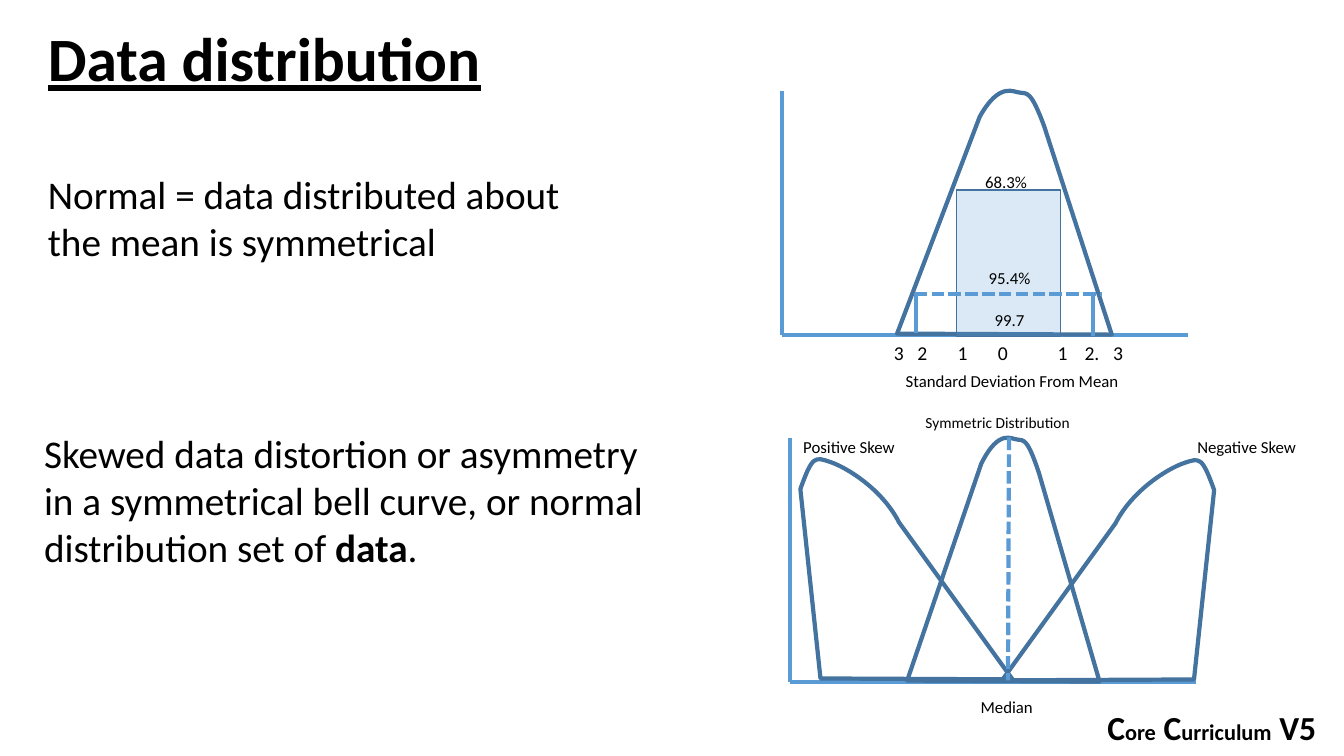
from dataclasses import dataclass
from typing import NamedTuple, Optional

from lxml.etree import SubElement
from pptx import Presentation
from pptx.dml.color import RGBColor
from pptx.enum.dml import MSO_LINE_DASH_STYLE as Dash
from pptx.enum.shapes import MSO_CONNECTOR_TYPE as Connector
from pptx.enum.shapes import MSO_SHAPE as Shape
from pptx.enum.text import MSO_ANCHOR as Anchor
from pptx.enum.text import MSO_AUTO_SIZE as AutoSize
from pptx.enum.text import PP_ALIGN as Align
from pptx.oxml.ns import qn
from pptx.util import Inches, Pt

COLUMNS, ROWS = 160, 90
CELL = Inches(7.5) / ROWS
FONT, BLACK, BLUE, DARK_BLUE = "Calibri", "000000", "5B9BD5", "43739E"
AXIS_WIDTH, AXIS_HEIGHT = 48.3, 29.04


class Frame(NamedTuple):
    """A rectangle in grid columns and rows."""
    left: float
    top: float
    width: float
    height: float


class Span(NamedTuple):
    """A stretch of text with its own size or weight."""
    text: str
    size: Optional[float] = None
    bold: Optional[bool] = None


@dataclass
class Label:
    """A short one-line caption."""
    text: str
    left: float
    top: float
    width: float
    size: float = 12


@dataclass
class Stroke:
    """A straight line between two grid points."""
    x1: float
    y1: float
    x2: float
    y2: float
    dashed: bool = False


@dataclass
class Curve:
    """A closed outline fitted to a frame, optionally mirrored."""
    outline: list
    frame: Frame
    mirrored: bool = False


BELL = [[(0, 99.6)], [(38.5, 10.7)],
        [(47.9, -4.1), (54.5, 0.8), (57.3, 0.8)],
        [(60.6, 1.2), (62.4, 0), (68.5, 14.5)], [(100, 100)]]
SKEW = [[(100, 100)], [(46.5, 28.9)],
        [(38.5, 13.8), (21.9, 4.1), (14.3, 1.6)],
        [(6.7, -0.9), (5.7, -1.4), (0, 13.8)], [(9.5, 99.6)]]

ORIGINS = [(93.12, 39.84), (94.08, 81.18)]
CURVES = [
    Curve(BELL, Frame(106.8, 10.8, 25.56, AXIS_HEIGHT)),
    Curve(SKEW, Frame(95.28, 54.6, 25.26, 26.28)),
    Curve(BELL, Frame(108, 52.1, 22.9, AXIS_HEIGHT)),
    Curve(SKEW, Frame(119.28, 54.72, 25.26, 26.28), mirrored=True),
]
ONE_DEVIATION = Frame(113.88, 22.64, 12.36, 17.4)
MARKERS = [
    Stroke(108.9, 34.96, 131.16, 34.96, dashed=True),
    Stroke(109.02, 34.96, 109.02, 39.6),
    Stroke(130.16, 35.28, 130.16, 39.96),
    Stroke(120.12, 52.08, 120, 81, dashed=True),
]
LABELS = [
    Label("Standard Deviation From Mean", 106.64, 43.56, 41.28),
    Label("68.3%", 116.1, 19.8, 7.44),
    Label("95.4%", 116.52, 31.32, 7.44),
    Label("99.7", 117.24, 36.32, 6),
    Label("Symmetric Distribution", 109, 48.6, 19.68, 11),
    Label("Negative Skew", 141.36, 51.44, 14.28),
    Label("Positive Skew", 94.44, 51.36, 13.56),
    Label("Median", 115.56, 82.4, 8.64),
]
TICKS = [("3", 12.7), ("2", 15.5), ("1", 20.3), ("0", 25.1),
         ("1", 32.2), ("2.", 35.7), ("3", 38.8)]


def cells(count: float) -> int:
    """Turn grid cells into slide units."""
    return round(count * CELL)


def colour(hex_code: str) -> RGBColor:
    """Turn a hex string into a colour."""
    return RGBColor.from_string(hex_code)


def style(para, size: float, bold: bool = False) -> None:
    """Set the font of a whole paragraph."""
    para.font.name, para.font.size, para.font.bold = FONT, Pt(size), bold
    para.font.color.rgb = colour(BLACK)


def place(shape, frame: Frame) -> None:
    """Move a shape to its frame."""
    shape.left, shape.top, shape.width, shape.height = map(cells, frame)


def add_box(page, frame: Frame, wrap: bool = True):
    """Add a text box and return its first paragraph."""
    box = page.shapes.add_textbox(*map(cells, frame))
    box.text_frame.word_wrap = wrap
    return box.text_frame.paragraphs[0]


def add_spans(para, spans: list[Span]) -> None:
    """Add runs that differ in size or weight."""
    for span in spans:
        run = para.add_run()
        run.text = span.text
        if span.size:
            run.font.size = Pt(span.size)
        if span.bold is not None:
            run.font.bold = span.bold


def fill_title(page) -> None:
    """Write the underlined heading."""
    title = page.shapes.title
    place(title, Frame(4.5, -0.96, 158.4, 16.56))
    title.text_frame.auto_size = AutoSize.NONE
    title.text_frame.vertical_anchor = Anchor.MIDDLE
    para = title.text_frame.paragraphs[0]
    para.text, para.alignment, para.line_spacing = "Data distribution", Align.LEFT, 0.9
    style(para, 44, bold=True)
    para.font.underline = True


def fill_body(body, frame: Frame, lines: list[list[Span]]) -> None:
    """Write unbulleted statements into a body placeholder."""
    place(body, frame)
    text = body.text_frame
    text.auto_size = AutoSize.NONE
    for index, spans in enumerate(lines):
        para = text.add_paragraph() if index else text.paragraphs[0]
        properties = para._p.get_or_add_pPr()
        properties.set("marL", "0")
        properties.set("indent", "0")
        SubElement(properties, qn("a:buNone"))
        para.space_before = Pt(0)
        style(para, 28)
        add_spans(para, spans)


def add_stroke(page, stroke: Stroke) -> None:
    """Draw a straight line."""
    ends = map(cells, (stroke.x1, stroke.y1, stroke.x2, stroke.y2))
    line = page.shapes.add_connector(Connector.STRAIGHT, *ends)
    line.line.color.rgb, line.line.width = colour(BLUE), Pt(3)
    if stroke.dashed:
        line.line.dash_style = Dash.SQUARE_DOT
    SubElement(line._element.spPr, qn("a:effectLst"))


def add_curve(page, curve: Curve) -> None:
    """Draw a distribution outline with true cubic segments."""
    frame = curve.frame
    segments = [[(cells(frame.left + frame.width * (100 - x if curve.mirrored else x) / 100),
                  cells(frame.top + frame.height * y / 100)) for x, y in segment]
                for segment in curve.outline]
    anchors = [segment[-1] for segment in segments]
    builder = page.shapes.build_freeform(*anchors[0])
    builder.add_line_segments(anchors[1:], close=True)
    shape = builder.convert_to_shape()
    lines = shape._element.spPr.findall(".//" + qn("a:lnTo"))
    for segment, line in zip(segments[1:], lines):
        if len(segment) == 3:
            cubic = line.makeelement(qn("a:cubicBezTo"))
            for x, y in segment:
                SubElement(cubic, qn("a:pt"), x=str(x - shape.left), y=str(y - shape.top))
            line.getparent().replace(line, cubic)
    shape.shadow.inherit = False
    shape.fill.background()
    shape.line.color.rgb, shape.line.width = colour(DARK_BLUE), Pt(3)


def add_deviation_area(page) -> None:
    """Draw the translucent one-deviation area."""
    area = page.shapes.add_shape(Shape.RECTANGLE, *map(cells, ONE_DEVIATION))
    area.shadow.inherit = False
    area.fill.solid()
    area.fill.fore_color.rgb = colour(BLUE)
    SubElement(area._element.spPr.find(".//" + qn("a:srgbClr")), qn("a:alpha"), val="22000")
    area.line.color.rgb, area.line.width = colour(DARK_BLUE), Pt(1)


def add_ticks(page) -> None:
    """Write the deviation scale on centred tab stops."""
    para = add_box(page, Frame(93.12, 39.96, 48.36, 4.08))
    stops = SubElement(para._p.get_or_add_pPr(), qn("a:tabLst"))
    for _, position in TICKS:
        SubElement(stops, qn("a:tab"), pos=str(cells(position)), algn="ctr")
    style(para, 14)
    add_spans(para, [Span("".join("\t" + text for text, _ in TICKS))])


def main() -> None:
    """Build the slide."""
    deck = Presentation()
    deck.slide_width, deck.slide_height = cells(COLUMNS), cells(ROWS)
    page = deck.slides.add_slide(deck.slide_layouts[3])
    fill_title(page)
    fill_body(page.placeholders[1], Frame(4.5, 19.68, 65.04, 12.48),
              [[Span("Normal = data distributed about")], [Span("the mean is symmetrical")]])
    fill_body(page.placeholders[2], Frame(4.04, 50.52, 76.68, 18.12),
              [[Span("Skewed data distortion or asymmetry in a symmetrical bell curve, "
                     "or normal distribution set of "), Span("data", bold=True), Span(".")]])
    for x, y in ORIGINS:
        add_stroke(page, Stroke(x, y - AXIS_HEIGHT, x, y))
        add_stroke(page, Stroke(x + AXIS_WIDTH, y, x, y))
    for curve in CURVES:
        add_curve(page, curve)
    add_deviation_area(page)
    for marker in MARKERS:
        add_stroke(page, marker)
    for label in LABELS:
        para = add_box(page, Frame(label.left, label.top, label.width, 3.6), wrap=False)
        para.text = label.text
        style(para, label.size)
    add_ticks(page)
    footer = add_box(page, Frame(130.64, 83.52, 28.2, 6))
    style(footer, 24, bold=True)
    add_spans(footer, [Span("C"), Span("ore", 16), Span(" C"), Span("urriculum", 16), Span(" V5")])
    deck.save("out.pptx")


if __name__ == "__main__":
    main()
